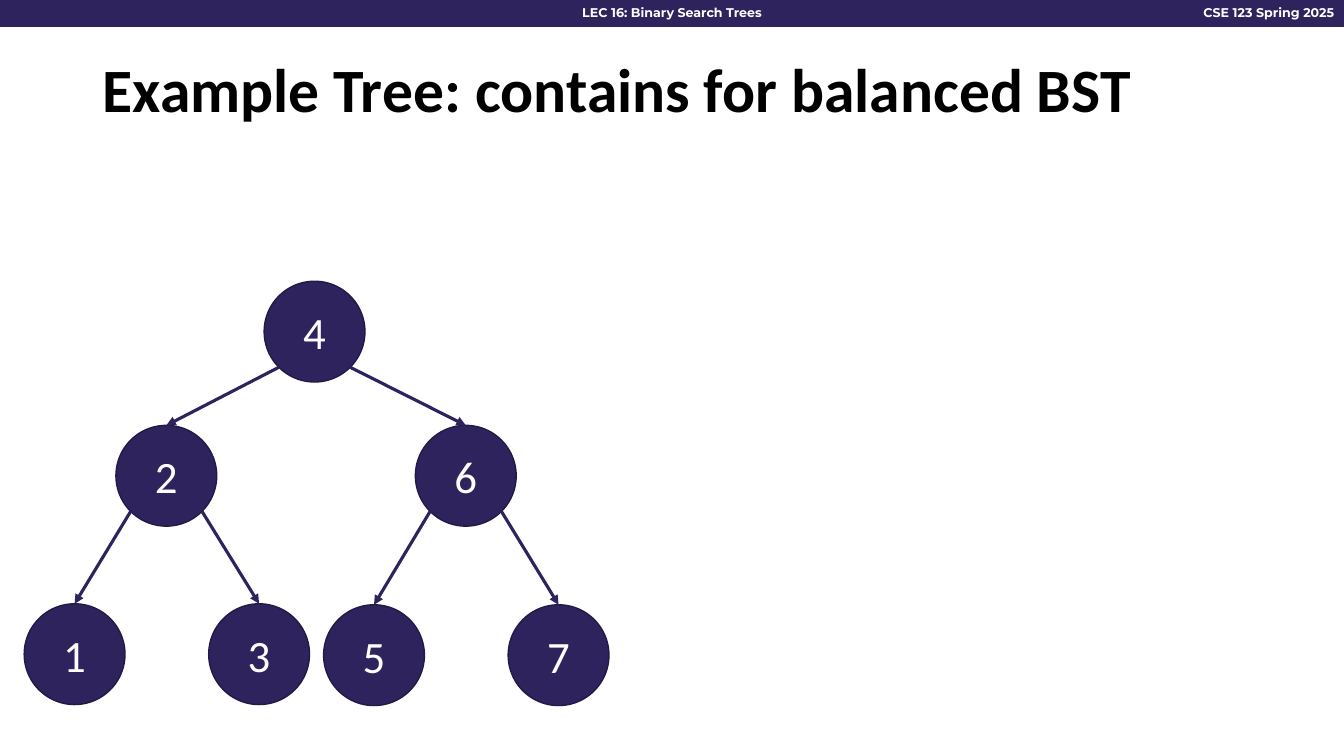
"""Build the slide showing a balanced binary search tree."""
from math import copysign, sqrt

from lxml.etree import SubElement
from pptx import Presentation
from pptx.dml.color import RGBColor
from pptx.enum.shapes import MSO_CONNECTOR as LINK, MSO_SHAPE as SHAPE
from pptx.enum.text import MSO_ANCHOR as ANCHOR, PP_ALIGN as ALIGN
from pptx.oxml.ns import qn
from pptx.util import Inches, Pt

COLORS = {"purple": "2E235D", "outline": "221A45", "white": "FFFFFF", "black": "000000"}
WIDTH, HEIGHT = 13.33, 7.5
DIAMETER = 1
RADIUS = DIAMETER / 2


def write(frame, text, size, font, color, align, bold=False):
    frame.word_wrap = True
    paragraph = frame.paragraphs[0]
    paragraph.alignment = align
    run = paragraph.add_run()
    run.text = text
    run.font.size = Pt(size)
    run.font.name = font
    run.font.bold = bold
    run.font.color.rgb = RGBColor.from_string(COLORS[color])
    return paragraph


def add_filled(kind, box, outline):
    shape = slide.shapes.add_shape(kind, *map(Inches, box))
    shape.shadow.inherit = False
    shape.fill.solid()
    shape.fill.fore_color.rgb = RGBColor.from_string(COLORS["purple"])
    shape.line.color.rgb = RGBColor.from_string(COLORS[outline])
    shape.line.width = Pt(1)
    return shape


deck = Presentation()
deck.slide_width, deck.slide_height = Inches(WIDTH), Inches(HEIGHT)
slide = deck.slides.add_slide(deck.slide_layouts[6])

add_filled(SHAPE.RECTANGLE, (-0.1, 0, 13.67, 0.26), "purple")

for label, left, width, align in [
    ("CSE 123 Spring 2025", 11.56, 1.77, ALIGN.RIGHT),
    ("LEC 16: Binary Search Trees", 3.28, 6.77, ALIGN.CENTER),
]:
    header = slide.shapes.add_textbox(Inches(left), 0, Inches(width), Inches(0.25))
    write(header.text_frame, label, 9, "Montserrat", "white", align, bold=True)

title = slide.shapes.add_textbox(Inches(0.92), Inches(0.5), Inches(11.5), Inches(0.83))
title.text_frame.vertical_anchor = ANCHOR.MIDDLE
heading = write(title.text_frame, "Example Tree: contains for balanced BST", 44,
                "Calibri", "black", ALIGN.LEFT, bold=True)
heading.line_spacing = 0.9

centers = {
    4: (3.12, 3.29),
    2: (1.65, 4.72), 6: (4.62, 4.72),
    1: (0.74, 6.49), 3: (2.57, 6.49), 5: (3.71, 6.5), 7: (5.54, 6.5),
}
children = {4: (2, 6), 2: (1, 3), 6: (5, 7)}

for value, (x, y) in centers.items():
    node = add_filled(SHAPE.OVAL, (x - RADIUS, y - RADIUS, DIAMETER, DIAMETER), "outline")
    node.text_frame.vertical_anchor = ANCHOR.MIDDLE
    write(node.text_frame, str(value), 32, "Calibri", "white", ALIGN.CENTER)

diagonal = RADIUS / sqrt(2)
for parent, pair in children.items():
    x, y = centers[parent]
    for child in pair:
        child_x, child_y = centers[child]
        start_x = x + copysign(diagonal, child_x - x)
        ends = (start_x, y + diagonal, child_x, child_y - RADIUS)
        edge = slide.shapes.add_connector(LINK.STRAIGHT, *map(Inches, ends))
        edge.line.color.rgb = RGBColor.from_string(COLORS["purple"])
        edge.line.width = Pt(2.25)
        SubElement(edge.line._get_or_add_ln(), qn("a:tailEnd"), type="triangle")
        SubElement(edge._element.spPr, qn("a:effectLst"))

deck.save("out.pptx")
